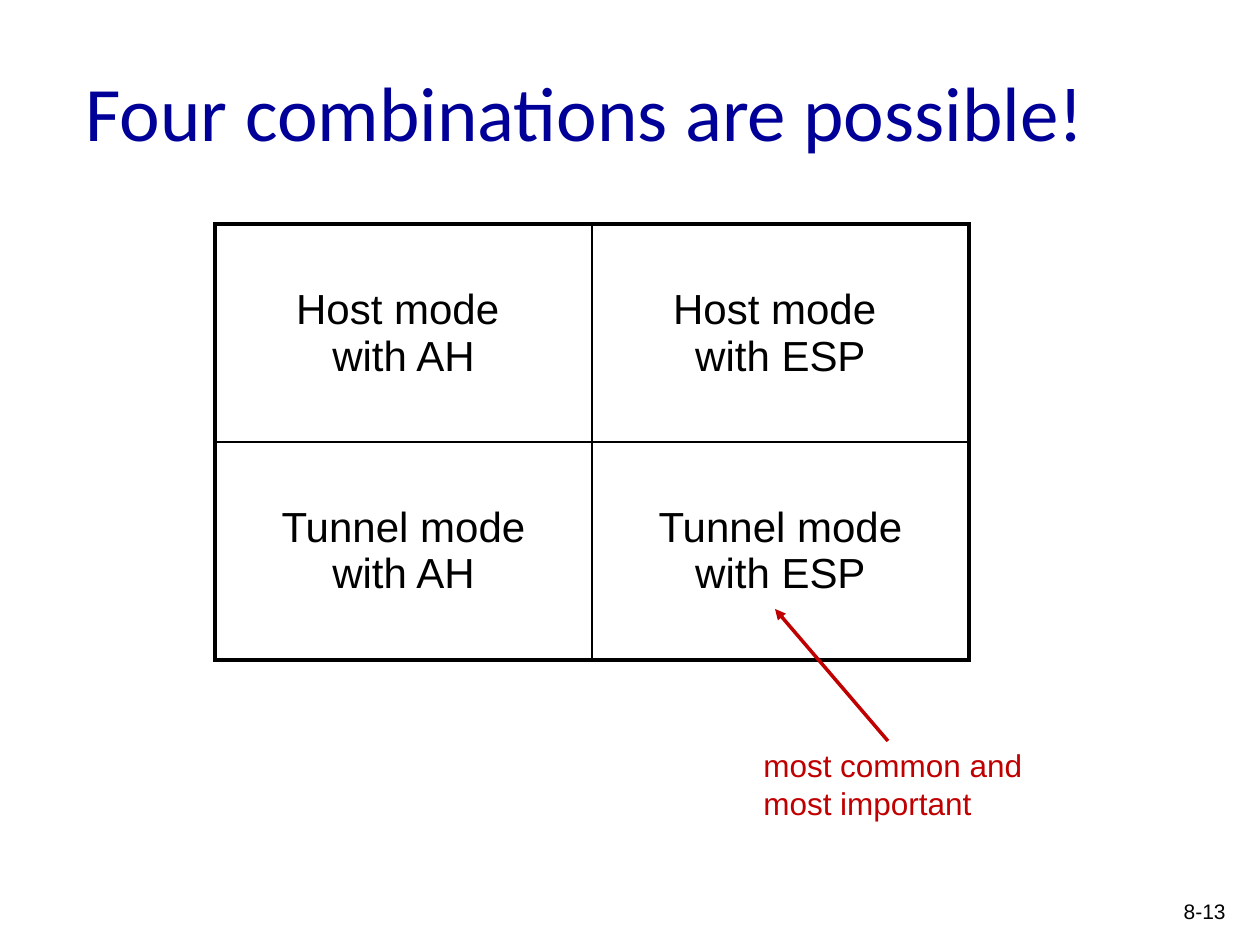
from lxml import etree
from pptx import Presentation
from pptx.dml.color import RGBColor
from pptx.enum.shapes import MSO_CONNECTOR
from pptx.enum.text import MSO_ANCHOR, PP_ALIGN
from pptx.oxml.ns import qn
from pptx.util import Pt

STRAIGHT = MSO_CONNECTOR.STRAIGHT
MIDDLE = MSO_ANCHOR.MIDDLE
LEFT, CENTER, RIGHT = PP_ALIGN.LEFT, PP_ALIGN.CENTER, PP_ALIGN.RIGHT

COLORS = {"title": "000099", "text": "000000", "accent": "C00000"}
TITLE = "Four combinations are possible!"
COMBINATIONS = [
    ["Host mode \vwith AH", "Host mode \vwith ESP"],
    ["Tunnel mode\vwith AH", "Tunnel mode\vwith ESP"],
]
NOTE = "most common and\vmost important"
PAGE = "8-13"

TITLE_BOX = (73, 32, 1071, 158)
TABLE_BOX = (215, 224, 754, 436)
NOTE_BOX = (751, 740, 316, 97)
PAGE_BOX = (1145, 892, 93, 42)
ARROW = (888, 741, 775, 609)
OUTER, INNER = 2.25, 1


def px(*lengths):
    return [round(length * 914400 / 126) for length in lengths]


def write(text_frame, text, font, size, color, align):
    paragraph = text_frame.paragraphs[0]
    paragraph.text = text
    paragraph.alignment = align
    for run in paragraph.runs:
        run.font.name = font
        run.font.size = Pt(size)
        run.font.color.rgb = RGBColor.from_string(COLORS[color])


def add_text(slide, box, text, size, color, align):
    shape = slide.shapes.add_textbox(*px(*box))
    shape.text_frame.word_wrap = True
    write(shape.text_frame, text, "Arial", size, color, align)


def add_border(cell, side, width):
    properties = cell._tc.get_or_add_tcPr()
    line = etree.SubElement(properties, qn(f"a:ln{side}"), w=str(Pt(width)))
    fill = etree.SubElement(line, qn("a:solidFill"))
    etree.SubElement(fill, qn("a:srgbClr"), val=COLORS["text"])


def add_combinations(slide):
    rows, columns = len(COMBINATIONS), len(COMBINATIONS[0])
    table = slide.shapes.add_table(rows, columns, *px(*TABLE_BOX)).table
    table.first_row = table.horz_banding = False
    for r, labels in enumerate(COMBINATIONS):
        for c, label in enumerate(labels):
            cell = table.cell(r, c)
            cell.vertical_anchor = MIDDLE
            write(cell.text_frame, label, "Arial", 24, "text", CENTER)
            outer_sides = {"L": c == 0, "R": c == columns - 1,
                           "T": r == 0, "B": r == rows - 1}
            for side, is_outer in outer_sides.items():
                add_border(cell, side, OUTER if is_outer else INNER)
            cell.fill.background()


def add_arrow(slide):
    arrow = slide.shapes.add_connector(STRAIGHT, *px(*ARROW))
    arrow.line.width = Pt(2)
    arrow.line.color.rgb = RGBColor.from_string(COLORS["accent"])
    etree.SubElement(arrow.line._get_or_add_ln(), qn("a:tailEnd"), type="triangle")
    etree.SubElement(arrow._element.spPr, qn("a:effectLst"))


def main():
    presentation = Presentation()
    presentation.slide_width, presentation.slide_height = px(1260, 945)
    slide = presentation.slides.add_slide(presentation.slide_layouts[5])

    title = slide.shapes.title
    title.left, title.top, title.width, title.height = px(*TITLE_BOX)
    title.text_frame.vertical_anchor = MIDDLE
    write(title.text_frame, TITLE, "Calibri", 44, "title", LEFT)

    add_combinations(slide)
    add_arrow(slide)
    add_text(slide, NOTE_BOX, NOTE, 18, "accent", LEFT)
    add_text(slide, PAGE_BOX, PAGE, 12, "text", RIGHT)
    presentation.save("out.pptx")


if __name__ == "__main__":
    main()
